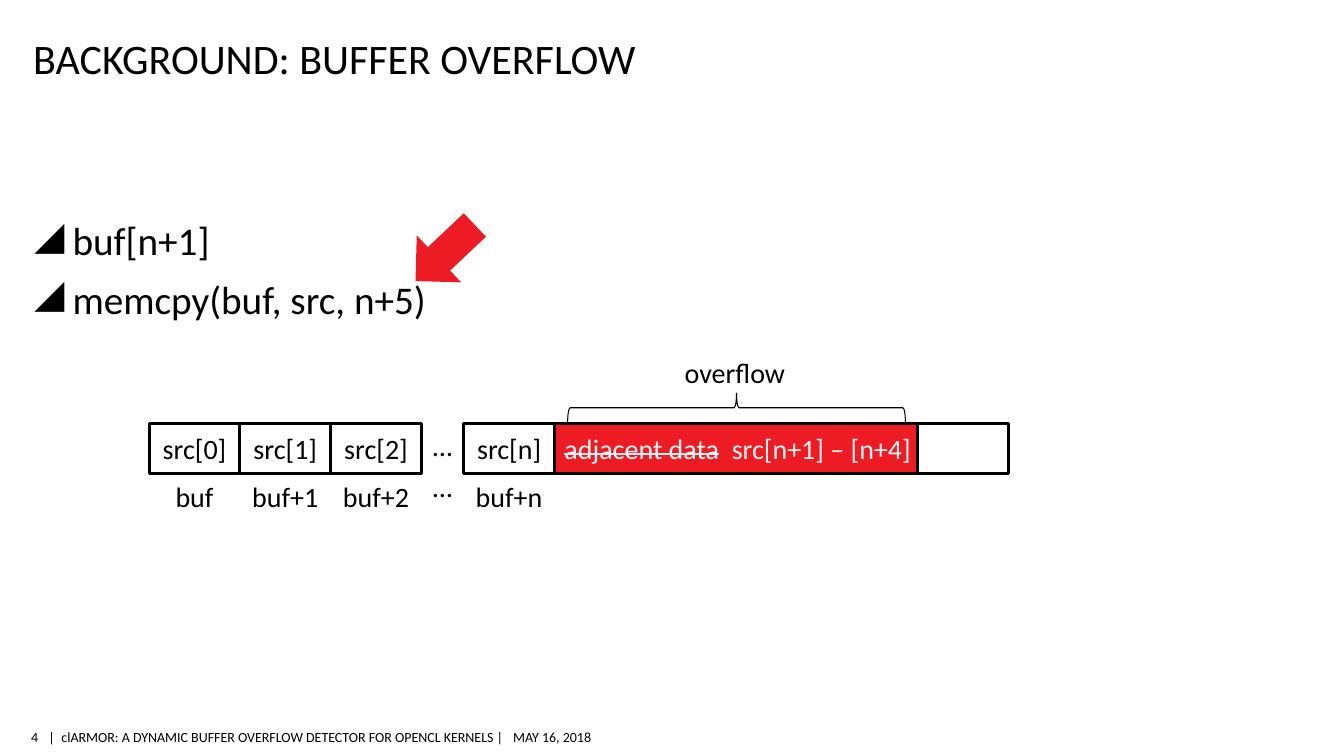
from lxml.etree import SubElement
from pptx import Presentation
from pptx.dml.color import RGBColor
from pptx.enum.shapes import MSO_SHAPE as Shape
from pptx.enum.text import MSO_ANCHOR as Anchor, PP_ALIGN as Align
from pptx.oxml.ns import qn
from pptx.util import Inches, Pt

BLACK = RGBColor(0, 0, 0)
RED = RGBColor(0xED, 0x1C, 0x24)
PALE = RGBColor(0xF2, 0xF2, 0xF2)

ROW_TOP, CELL_WIDTH, CELL_HEIGHT = 4.2, 0.9, 0.5
BUFFER_LEFT, TAIL_LEFT = 1.48, 4.6
OVERFLOW_LEFT = TAIL_LEFT + CELL_WIDTH


def set_frame(frame, anchor=Anchor.MIDDLE, insets=(0, 0.05, 0, 0.05)):
    left, top, right, bottom = map(Inches, insets)
    settings = {"word_wrap": True, "vertical_anchor": anchor, "margin_left": left,
                "margin_top": top, "margin_right": right, "margin_bottom": bottom}
    for name, value in settings.items():
        setattr(frame, name, value)


def add_run(paragraph, text, size, color=BLACK, strike=False):
    run = paragraph.add_run()
    run.text = text
    for name, value in {"name": "Calibri", "size": Pt(size)}.items():
        setattr(run.font, name, value)
    run.font.color.rgb = color
    if strike:
        run.font._element.set("strike", "sngStrike")


def add_tabs(paragraph, *positions):
    tab_list = SubElement(paragraph._p.get_or_add_pPr(), qn("a:tabLst"))
    for position in positions:
        SubElement(tab_list, qn("a:tab"), pos=str(Inches(position)), algn="l")


def add_text(slide, box, text, size, align=Align.LEFT, **frame_format):
    frame = slide.shapes.add_textbox(*map(Inches, box)).text_frame
    set_frame(frame, **frame_format)
    paragraph = frame.paragraphs[0]
    paragraph.alignment = align
    add_run(paragraph, text, size)
    return paragraph


def add_bullets(slide, box, items):
    frame = slide.shapes.add_textbox(*map(Inches, box)).text_frame
    set_frame(frame, anchor=Anchor.TOP)
    for index, item in enumerate(items):
        paragraph = frame.add_paragraph() if index else frame.paragraphs[0]
        properties = paragraph._p.get_or_add_pPr()
        properties.set("marL", str(Inches(0.38)))
        properties.set("indent", str(-Inches(0.38)))
        SubElement(properties, qn("a:buChar"), char="◢")
        if index:
            paragraph.space_before = Pt(8)
        add_run(paragraph, item, 28)


def add_figure(slide, kind, box, fill=None, line_width=None, rotation=0):
    shape = slide.shapes.add_shape(kind, *map(Inches, box))
    shape.shadow.inherit = False
    shape.rotation = rotation
    if fill is None:
        shape.fill.background()
    else:
        shape.fill.solid()
        shape.fill.fore_color.rgb = fill
    if line_width is None:
        shape.line.fill.background()
    else:
        shape.line.color.rgb = BLACK
        shape.line.width = Pt(line_width)
    return shape


def add_cell(slide, left, width=CELL_WIDTH, text="", fill=None):
    box = (left, ROW_TOP, width, CELL_HEIGHT)
    shape = add_figure(slide, Shape.RECTANGLE, box, fill, 2)
    set_frame(shape.text_frame)
    paragraph = shape.text_frame.paragraphs[0]
    paragraph.alignment = Align.CENTER
    if text:
        add_run(paragraph, text, 20)
    return shape


def add_memory_row(slide):
    # Overwritten neighbour and the untouched memory after it
    add_cell(slide, OVERFLOW_LEFT + 4 * CELL_WIDTH)
    overflow = add_cell(slide, OVERFLOW_LEFT, 4 * CELL_WIDTH, fill=RED)
    set_frame(overflow.text_frame, insets=(0.1, 0.05, 0, 0.05))
    paragraph = overflow.text_frame.paragraphs[0]
    paragraph.alignment = Align.LEFT
    add_tabs(paragraph, 1.66)
    add_run(paragraph, "adjacent data", 20, PALE, strike=True)
    add_run(paragraph, "\tsrc[n+1] – [n+4]", 20, PALE)

    # Buffer cells with their addresses
    cells = [(BUFFER_LEFT + index * CELL_WIDTH, f"src[{index}]", address)
             for index, address in enumerate(("buf", "buf+1", "buf+2"))]
    cells.append((TAIL_LEFT, "src[n]", "buf+n"))
    for left, content, address in cells:
        add_cell(slide, left, text=content)
        add_text(slide, (left, 4.7, CELL_WIDTH, 0.44), address, 20, Align.CENTER)
    for top in (ROW_TOP, 4.6):
        add_text(slide, (4.2, top, 0.38, 0.44), "…", 20, Align.CENTER)


def main():
    presentation = Presentation()
    presentation.slide_width = Inches(13.33)
    presentation.slide_height = Inches(7.5)
    slide = presentation.slides.add_slide(presentation.slide_layouts[6])

    # Title and bullets
    add_text(slide, (0.33, 0.3, 11.4, 0.52), "BACKGROUND: BUFFER OVERFLOW", 30,
             anchor=Anchor.BOTTOM, insets=(0, 0.05, 0, 0))
    add_bullets(slide, (0.34, 2.1, 12.4, 4.8), ("buf[n+1]", "memcpy(buf, src, n+5)"))

    # Memory diagram
    add_memory_row(slide)
    add_figure(slide, Shape.RIGHT_BRACE, (7.16, 2.37, 0.29, 3.35),
               line_width=0.75, rotation=270)
    add_text(slide, (6.79, 3.47, 1.15, 0.44), "overflow", 20)
    add_figure(slide, Shape.RIGHT_ARROW, (4.01, 2.19, 0.81, 0.64), RED, rotation=136.6)

    # Footer
    add_text(slide, (0.22, 7.18, 0.16, 0.26), "4", 10, Align.RIGHT)
    footer = add_text(
        slide, (0.48, 7.18, 6, 0.26),
        "|\tclARMOR: A DYNAMIC BUFFER OVERFLOW DETECTOR FOR OPENCL KERNELS |\tMAY 16, 2018", 10)
    add_tabs(footer, 0.13, 4.61)

    presentation.save("out.pptx")


if __name__ == "__main__":
    main()
